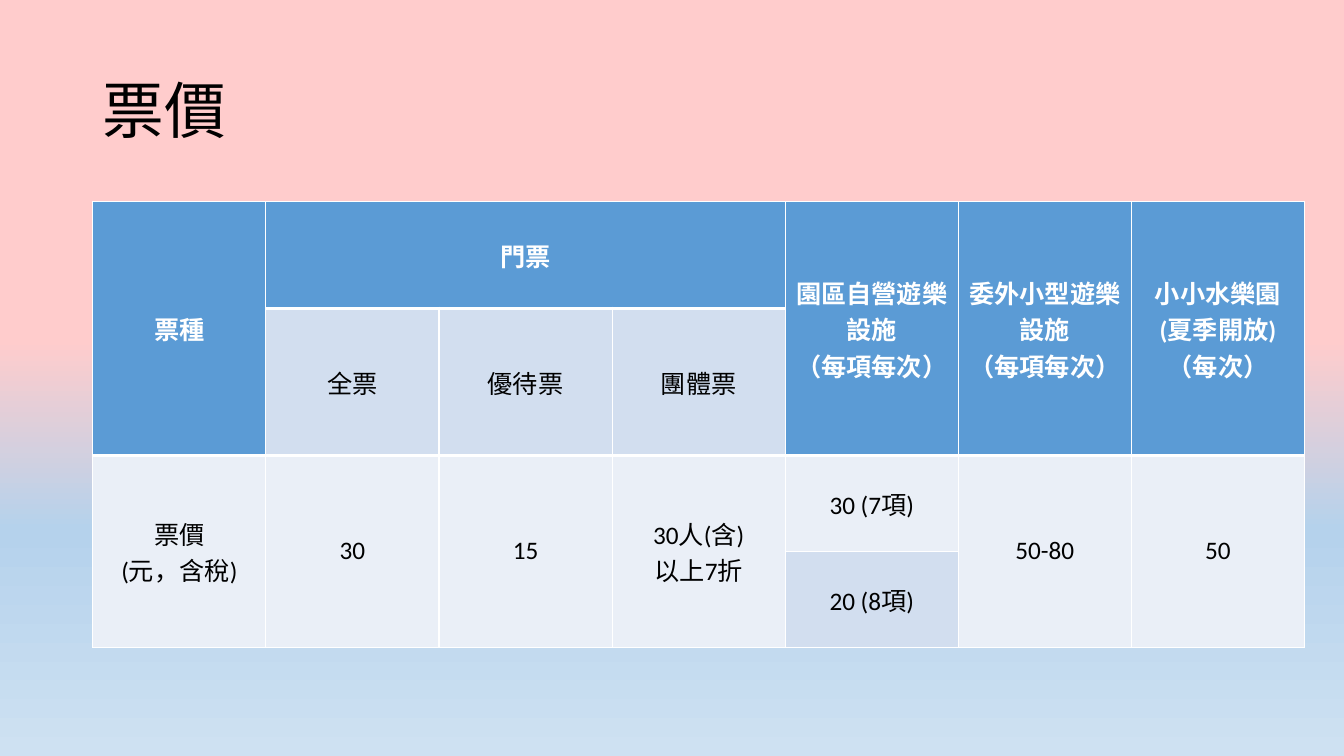
from copy import deepcopy

from lxml import etree
from pptx import Presentation
from pptx.dml.color import RGBColor
from pptx.enum.text import MSO_ANCHOR, PP_ALIGN
from pptx.oxml.ns import qn
from pptx.util import Emu, Pt

MIDDLE = MSO_ANCHOR.MIDDLE
CENTER = PP_ALIGN.CENTER
EMU_PER_PX = 9144
FONT = "Calibri"
WHITE, BLACK = "FFFFFF", "000000"
HEADER, DARK_BAND, LIGHT_BAND = "5B9BD5", "D2DEEF", "EAEFF7"
BACKGROUND_STOPS = [(0.45, "FFCCCC"), (0.7, "B5D2EC"), (1, "CEE1F2")]
COLUMN_COUNT = 7
ROW_HEIGHTS = [106, 146, 95, 95]
THIN, THICK = 1, 3

# (row, column, row span, column span, text, fill)
TICKET_CELLS = [
    (0, 0, 2, 1, "票種", HEADER),
    (0, 1, 1, 3, "門票", HEADER),
    (0, 4, 2, 1, "園區自營遊樂設施\v（每項每次）", HEADER),
    (0, 5, 2, 1, "委外小型遊樂設施\v（每項每次）", HEADER),
    (0, 6, 2, 1, "小小水樂園\v(夏季開放)\v（每次）", HEADER),
    (1, 1, 1, 1, "全票", DARK_BAND),
    (1, 2, 1, 1, "優待票", DARK_BAND),
    (1, 3, 1, 1, "團體票", DARK_BAND),
    (2, 0, 2, 1, "票價\v(元，含稅)", LIGHT_BAND),
    (2, 1, 2, 1, "30", LIGHT_BAND),
    (2, 2, 2, 1, "15", LIGHT_BAND),
    (2, 3, 2, 1, "30人(含)\v以上7折", LIGHT_BAND),
    (2, 4, 1, 1, "30 (7項)", LIGHT_BAND),
    (2, 5, 2, 1, "50-80", LIGHT_BAND),
    (2, 6, 2, 1, "50", LIGHT_BAND),
    (3, 4, 1, 1, "20 (8項)", DARK_BAND),
]


def px(length):
    """Turn a length in px into EMU."""
    return Emu(length * EMU_PER_PX)


def color(hex_value):
    """Turn a hex string into a colour."""
    return RGBColor.from_string(hex_value)


def format_runs(paragraph, size, hex_value, bold=False):
    """Set the font of every run in a paragraph."""
    for run in paragraph.runs:
        run.font.name = FONT
        run.font.size = Pt(size)
        run.font.bold = bold
        run.font.color.rgb = color(hex_value)


def set_background(slide):
    """Fill the slide with the vertical gradient."""
    fill = slide.background.fill
    fill.gradient()
    fill.gradient_angle = 270
    stop_list = slide.element.find(".//" + qn("a:gsLst"))
    stop_list.append(deepcopy(stop_list[0]))
    for stop, (position, hex_value) in zip(fill.gradient_stops, BACKGROUND_STOPS):
        stop.position = position
        stop.color.rgb = color(hex_value)


def add_title(slide, text):
    """Add the slide title."""
    text_frame = slide.shapes.add_textbox(px(92), px(40), px(1150), px(145)).text_frame
    text_frame.word_wrap = True
    text_frame.vertical_anchor = MIDDLE
    text_frame.text = text
    paragraph = text_frame.paragraphs[0]
    paragraph.line_spacing = 0.9
    format_runs(paragraph, 44, BLACK)


def add_border(cell, side, width):
    """Draw one white border of a cell."""
    properties = cell._tc.get_or_add_tcPr()
    line = etree.SubElement(properties, qn("a:ln" + side), w=str(Pt(width)))
    fill = etree.SubElement(line, qn("a:solidFill"))
    etree.SubElement(fill, qn("a:srgbClr"), val=WHITE)


def style_cell(cell, fill, top, bottom):
    """Set the borders, fill and margins of a cell."""
    for side, width in (("L", THIN), ("R", THIN), ("T", top), ("B", bottom)):
        add_border(cell, side, width)
    cell.fill.solid()
    cell.fill.fore_color.rgb = color(fill)
    cell.vertical_anchor = MIDDLE
    cell.margin_left = cell.margin_right = px(3)
    cell.margin_top = cell.margin_bottom = px(3)


def fill_cell(table, row, column, row_span, column_span, text, fill):
    """Merge, style and label one block of the table."""
    is_header = fill == HEADER
    top = THICK if row in (1, 2) else THIN
    bottom = THICK if is_header or row == 1 else THIN
    last_row, last_column = row + row_span - 1, column + column_span - 1
    for block_row in range(row, last_row + 1):
        for block_column in range(column, last_column + 1):
            style_cell(table.cell(block_row, block_column), fill, top, bottom)
    cell = table.cell(row, column)
    if row_span * column_span > 1:
        cell.merge(table.cell(last_row, last_column))
    cell.text_frame.text = text
    paragraph = cell.text_frame.paragraphs[0]
    paragraph.alignment = CENTER
    format_runs(paragraph, 18, WHITE if is_header else BLACK, is_header)


def add_price_table(slide):
    """Add the table of ticket prices."""
    table = slide.shapes.add_table(
        len(ROW_HEIGHTS), COLUMN_COUNT, px(92), px(200), px(1202), px(sum(ROW_HEIGHTS))
    ).table
    table.first_row = table.horz_banding = False
    for row, height in zip(table.rows, ROW_HEIGHTS):
        row.height = px(height)
    for ticket_cell in TICKET_CELLS:
        fill_cell(table, *ticket_cell)


def main():
    """Build and save the ticket price slide."""
    presentation = Presentation()
    presentation.slide_width, presentation.slide_height = px(1333), px(750)
    slide = presentation.slides.add_slide(presentation.slide_layouts[6])
    set_background(slide)
    add_title(slide, "票價")
    add_price_table(slide)
    presentation.save("out.pptx")


if __name__ == "__main__":
    main()
